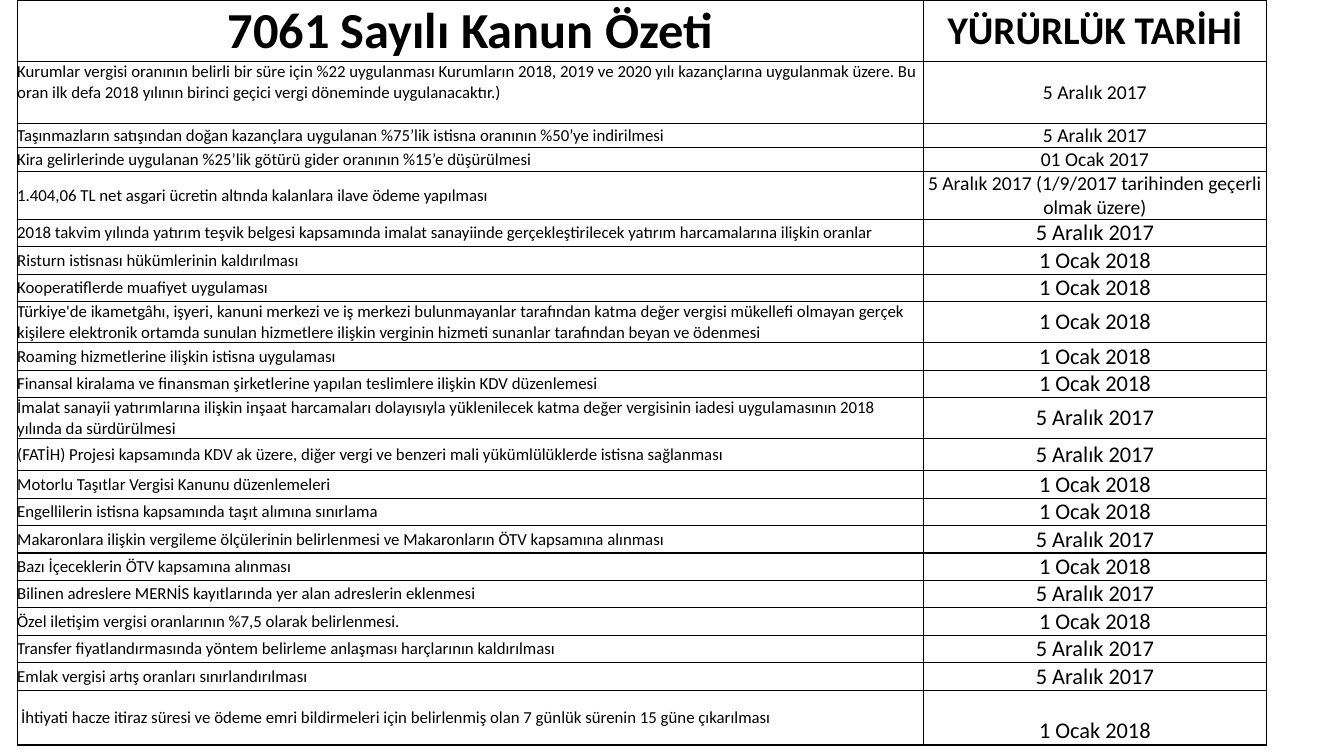
from dataclasses import dataclass

from lxml import etree
from pptx import Presentation
from pptx.dml.color import RGBColor
from pptx.enum.text import MSO_ANCHOR, PP_ALIGN
from pptx.oxml.ns import qn
from pptx.util import Inches, Pt

LEFT, CENTER = PP_ALIGN.LEFT, PP_ALIGN.CENTER
MIDDLE = MSO_ANCHOR.MIDDLE
WIDTH, HEIGHT = 13.33, 7.5


@dataclass(frozen=True)
class Theme:
    font: str = "Calibri"
    ink: str = "000000"
    title: int = 36
    head: int = 28
    body: int = 12
    small: int = 14
    date: int = 16
    rule: int = 1


THEME = Theme()

# Columns are shares of the slide's width, rows of its height, in percent.
START = 1.28
COLS = (67.44, 25.5)
HEAD, ROW = 8.1, 3.62
DEC, JAN = "5 Aralık 2017", "1 Ocak 2018"

# Topic, date in force, and any format that differs from a plain row.
LAWS = [
    ("Kurumlar vergisi oranının belirli bir süre için %22 uygulanması "
     "Kurumların 2018, 2019 ve 2020 yılı kazançlarına uygulanmak üzere. Bu "
     "oran ilk defa 2018 yılının birinci geçici vergi döneminde uygulanacaktır.)",
     DEC, {"row": 8.2, "size": THEME.small, "foot": 2.7}),
    ("Taşınmazların satışından doğan kazançlara uygulanan %75’lik istisna "
     "oranının %50’ye indirilmesi", DEC, {"row": 3.15, "size": THEME.small}),
    ("Kira gelirlerinde uygulanan %25’lik götürü gider oranının %15’e "
     "düşürülmesi", "01 Ocak 2017", {"row": 3.15, "size": THEME.small}),
    ("1.404,06 TL net asgari ücretin altında kalanlara ilave ödeme yapılması",
     "5 Aralık 2017 (1/9/2017 tarihinden geçerli olmak üzere)",
     {"row": 6.3, "size": THEME.small}),
    ("2018 takvim yılında yatırım teşvik belgesi kapsamında imalat sanayiinde "
     "gerçekleştirilecek yatırım harcamalarına ilişkin oranlar",
     DEC, {"row": 3.65}),
    ("Risturn istisnası hükümlerinin kaldırılması", JAN, {}),
    ("Kooperatiflerde muafiyet uygulaması", JAN, {}),
    ("Türkiye'de ikametgâhı, işyeri, kanuni merkezi ve iş merkezi "
     "bulunmayanlar tarafından katma değer vergisi mükellefi olmayan gerçek "
     "kişilere elektronik ortamda sunulan hizmetlere ilişkin verginin hizmeti "
     "sunanlar tarafından beyan ve ödenmesi", JAN, {"row": 5.45}),
    ("Roaming hizmetlerine ilişkin istisna uygulaması", JAN, {}),
    ("Finansal kiralama ve finansman şirketlerine yapılan teslimlere ilişkin "
     "KDV düzenlemesi", JAN, {}),
    ("İmalat sanayii yatırımlarına ilişkin inşaat harcamaları dolayısıyla "
     "yüklenilecek katma değer vergisinin iadesi uygulamasının 2018 yılında "
     "da sürdürülmesi", DEC, {"row": 5.4}),
    ("(FATİH) Projesi kapsamında KDV ak üzere, diğer vergi ve benzeri mali "
     "yükümlülüklerde istisna sağlanması", DEC, {"row": 4.25}),
    ("Motorlu Taşıtlar Vergisi Kanunu düzenlemeleri", JAN, {}),
    ("Engellilerin istisna kapsamında taşıt alımına sınırlama", JAN, {}),
    ("Makaronlara ilişkin vergileme ölçülerinin belirlenmesi ve Makaronların "
     "ÖTV kapsamına alınması", DEC, {}),
    ("Bazı İçeceklerin ÖTV kapsamına alınması", JAN, {}),
    ("Bilinen adreslere MERNİS kayıtlarında yer alan adreslerin eklenmesi",
     DEC, {}),
    ("Özel iletişim vergisi oranlarının %7,5 olarak belirlenmesi.", JAN, {}),
    ("Transfer fiyatlandırmasında yöntem belirleme anlaşması harçlarının "
     "kaldırılması", DEC, {}),
    ("Emlak vergisi artış oranları sınırlandırılması", DEC, {}),
    ("İhtiyati hacze itiraz süresi ve ödeme emri bildirmeleri için "
     "belirlenmiş olan 7 günlük sürenin 15 güne çıkarılması",
     JAN, {"row": 7.25, "inset": 0.3, "top": ROW}),
]


def across(share):
    return Inches(WIDTH * share / 100)


def down(share):
    return Inches(HEIGHT * share / 100)


def border(cell):
    props = cell._tc.get_or_add_tcPr()
    for side in ("a:lnL", "a:lnR", "a:lnT", "a:lnB"):
        line = etree.SubElement(props, qn(side), w=str(Pt(THEME.rule)))
        fill = etree.SubElement(line, qn("a:solidFill"))
        etree.SubElement(fill, qn("a:srgbClr"), val=THEME.ink)


def write(cell, text, size=THEME.body, bold=False, align=LEFT,
          inset=0, top=0, foot=0):
    """Fill a ruled cell; inset, top and foot are margins in percent."""
    border(cell)
    cell.fill.background()
    cell.vertical_anchor = MIDDLE
    cell.margin_left, cell.margin_right = across(inset), 0
    cell.margin_top, cell.margin_bottom = down(top), down(foot)
    para = cell.text_frame.paragraphs[0]
    para.alignment = align
    run = para.add_run()
    run.text = text
    font = run.font
    font.name, font.size, font.bold = THEME.font, Pt(size), bold
    font.color.rgb = RGBColor.from_string(THEME.ink)


def add_grid(slide, rows):
    frame = slide.shapes.add_table(
        len(rows), len(COLS), across(START), 0,
        across(sum(COLS)), down(sum(rows)))
    table = frame.table
    table.first_row = table.horz_banding = False
    for col, share in zip(table.columns, COLS):
        col.width = across(share)
    for row, share in zip(table.rows, rows):
        row.height = down(share)
    return table


def add_laws(slide):
    rows = [HEAD] + [look.get("row", ROW) for _, _, look in LAWS]
    table = add_grid(slide, rows)
    write(table.cell(0, 0), "7061 Sayılı Kanun Özeti",
          size=THEME.title, bold=True, align=CENTER)
    write(table.cell(0, 1), "YÜRÜRLÜK TARİHİ",
          size=THEME.head, bold=True, align=CENTER)
    for at, (topic, date, look) in enumerate(LAWS, 1):
        write(table.cell(at, 0), topic,
              inset=look.get("inset", 0), foot=look.get("foot", 0))
        write(table.cell(at, 1), date, align=CENTER,
              size=look.get("size", THEME.date), top=look.get("top", 0))


def main():
    deck = Presentation()
    deck.slide_width, deck.slide_height = Inches(WIDTH), Inches(HEIGHT)
    blank = deck.slide_layouts[6]
    add_laws(deck.slides.add_slide(blank))
    deck.save("out.pptx")


if __name__ == "__main__":
    main()
